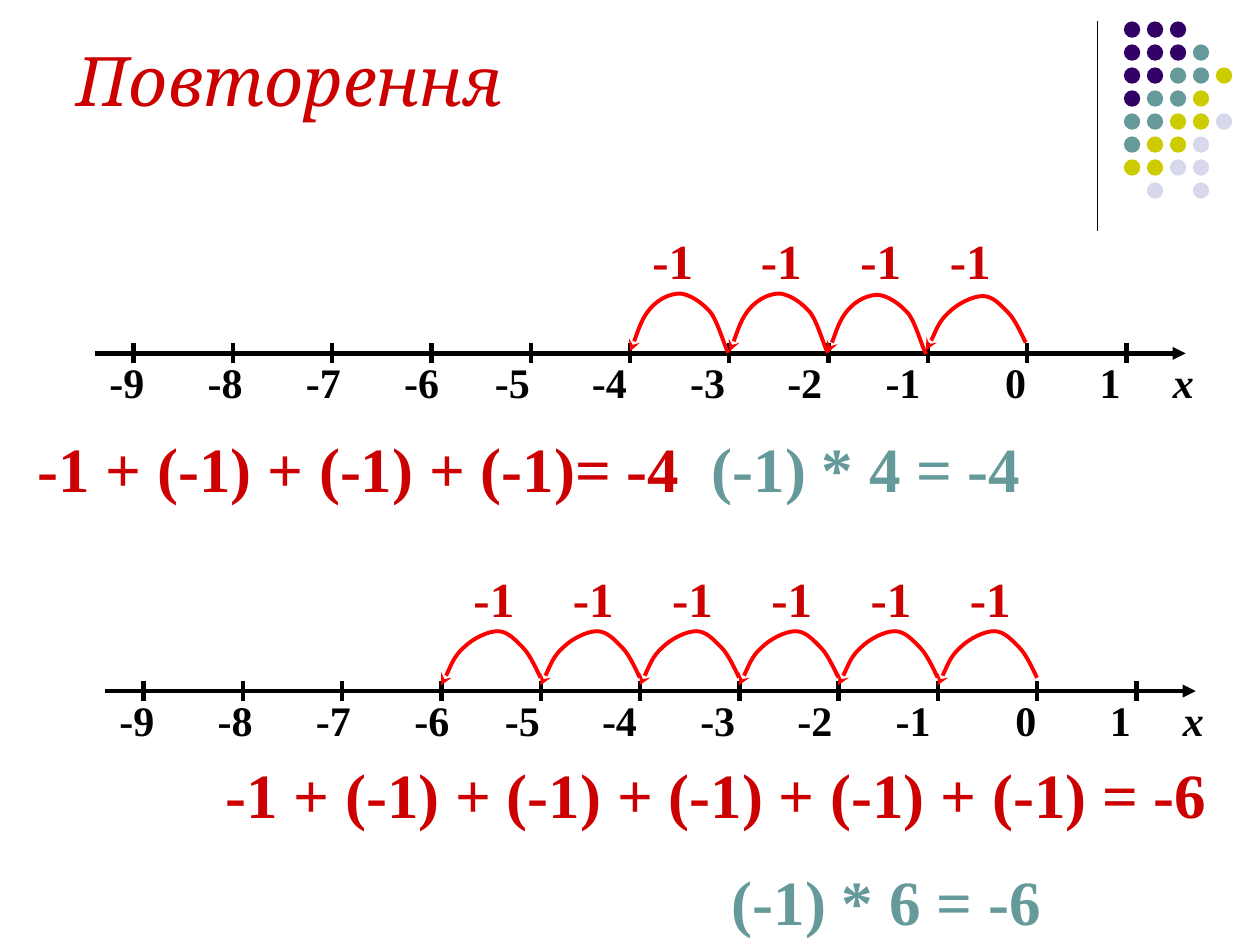
import pptx
import pptx.util
import pptx.dml.color
import pptx.enum.shapes
import pptx.enum.text
import pptx.oxml.ns
from lxml import etree

SCALE = 9144  # EMU per px, 100 px to the inch
STEP = 78.8  # one unit on the number lines
HUES = {"black": "000000", "white": "FFFFFF", "red": "CC0000", "arc": "FF0000",
        "plum": "330066", "teal": "669999", "lime": "CCCC00", "pale": "D8D8EC"}
SERIF = "Times New Roman"
SHAPE = pptx.enum.shapes.MSO_SHAPE
ANCHOR = pptx.enum.text.MSO_ANCHOR

DOTS = ["ppp", "pppt", "pptty", "ptty", "ttyyl", "tyyl", "yyll", " l l"]
DOT_HUES = {"p": "plum", "t": "teal", "y": "lime", "l": "pale"}

NUMS = ["-9", "-8", "-7", "-6", "-5", "-4", "-3", "-2", "-1", "0", "1", "х"]
TABS = [50, 128, 206, 284, 356, 433, 511, 588, 666, 761, 836, 894]

# Start point, then Bezier triples, measured from the arc's top left corner
SOFT = [(79, 37), (77, 33), (71, 19), (65, 13), (59, 7), (53, 0), (45, 0),
        (37, 0), (25, 6), (18, 13), (10, 20), (4, 37), (0, 43)]
STEEP = [(78, 47), (75, 42), (70, 23), (64, 15), (57, 7), (48, 1), (40, 0),
         (32, 0), (23, 4), (16, 12), (9, 20), (3, 40), (0, 46)]


def px(num):
    return pptx.util.Emu(round(num * SCALE))


def rgb(hue):
    return pptx.dml.color.RGBColor.from_string(HUES[hue])


def add_xml(node, tag, **attrs):
    return etree.SubElement(node, pptx.oxml.ns.qn(tag), **attrs)


def write(para, words, size=24, font=SERIF, hue="black", bold=True, slant=False):
    run = para.add_run()
    run.text = words
    run.font.size = pptx.util.Pt(size)
    run.font.name = font
    run.font.bold = bold
    run.font.italic = slant
    run.font.color.rgb = rgb(hue)


def stroke(line, hue, width, head=None):
    line.color.rgb = rgb(hue)
    line.width = pptx.util.Pt(width)
    if head:
        add_xml(line._get_or_add_ln(), "a:tailEnd", type=head)


def rule(shapes, x1, y1, x2, y2, width, head=None):
    line = shapes.add_connector(pptx.enum.shapes.MSO_CONNECTOR.STRAIGHT,
                                px(x1), px(y1), px(x2), px(y2))
    stroke(line.line, "black", width, head)
    add_xml(line._element.spPr, "a:effectLst")


def label(slide, box, words, **style):
    frame = slide.shapes.add_textbox(*map(px, box)).text_frame
    frame.word_wrap = False
    frame.auto_size = pptx.enum.text.MSO_AUTO_SIZE.SHAPE_TO_FIT_TEXT
    write(frame.paragraphs[0], words, **style)


def title(slide, box, words):
    head = slide.shapes.title
    head.left, head.top, head.width, head.height = map(px, box)
    head.text_frame.vertical_anchor = ANCHOR.MIDDLE
    para = head.text_frame.paragraphs[0]
    para.alignment = pptx.enum.text.PP_ALIGN.LEFT
    write(para, words, size=39, font="Cambria", hue="red", bold=False, slant=True)


def corner(slide, left, top):
    """Dot pattern with the upright rule on its left."""
    rule(slide.shapes, left, top, left, top + 166, 0.75)
    group = slide.shapes.add_group_shape()
    for row, marks in enumerate(DOTS):
        for col, mark in enumerate(marks):
            if mark == " ":
                continue
            x, y = left + 21 + 18.25 * col, top + 18.25 * row
            dot = group.shapes.add_shape(SHAPE.OVAL, px(x), px(y), px(13), px(13))
            dot.shadow.inherit = False
            dot.fill.solid()
            dot.fill.fore_color.rgb = rgb(DOT_HUES[mark])
            dot.line.fill.background()


def axis(slide, left, top):
    """Number line from -9 to 1 on a white panel."""
    shapes = slide.shapes.add_group_shape().shapes
    panel = shapes.add_shape(SHAPE.RECTANGLE, px(left), px(top), px(937), px(100))
    panel.shadow.inherit = False
    panel.fill.solid()
    panel.fill.fore_color.rgb = rgb("white")
    stroke(panel.line, "white", 0.75)
    frame = panel.text_frame
    frame.word_wrap = True
    frame.vertical_anchor = ANCHOR.BOTTOM
    frame.margin_bottom = px(10)
    para = frame.paragraphs[0]
    para.alignment = pptx.enum.text.PP_ALIGN.LEFT
    stops = add_xml(para._p.get_or_add_pPr(), "a:tabLst")
    for stop in TABS:
        add_xml(stops, "a:tab", pos=str(px(stop)), algn="l")
    write(para, "\t" + "\t".join(NUMS[:-1]) + "\t")
    write(para, NUMS[-1], slant=True)

    rule(shapes, left + 48, top + 47.5, left + 914, top + 47.5, 2.5, "triangle")
    for num in range(11):
        x = left + 79 + STEP * num
        rule(shapes, x, top + 39.5, x, top + 55, 2.5)


def bend(arc):
    """Turn each three straight segments into one Bezier curve."""
    lines = list(arc._element.iter(pptx.oxml.ns.qn("a:lnTo")))
    for i in range(0, len(lines), 3):
        curve = etree.Element(pptx.oxml.ns.qn("a:cubicBezTo"))
        lines[i].addprevious(curve)
        for line in lines[i:i + 3]:
            curve.append(line[0])
            line.getparent().remove(line)


def hop(slide, left, top, curve):
    spots = [(px(left + x), px(top + y)) for x, y in curve]
    pen = slide.shapes.build_freeform(*spots[0])
    pen.add_line_segments(spots[1:], close=False)
    arc = pen.convert_to_shape()
    bend(arc)
    arc.shadow.inherit = False
    arc.fill.background()
    stroke(arc.line, "arc", 2.25, "stealth")


def hops(slide, top, arcs, marks):
    """Arcs as (left, top, curve), with a -1 above each one."""
    for arc, mark in zip(arcs, marks):
        hop(slide, *arc)
        label(slide, (mark, top, 53, 57), "-1", size=28, hue="red")


def main():
    deck = pptx.Presentation()
    deck.slide_width, deck.slide_height = px(1000), px(750)
    slide = deck.slides.add_slide(deck.slide_layouts[5])
    corner(slide, 871, 17)
    title(slide, (51, 0, 900, 125), "Повторення")

    axis(slide, 27, 233)
    hops(slide, 178, [(500, 233, STEEP), (579, 233, STEEP),
                      (657, 234, STEEP), (735, 235, SOFT)], [508, 594, 673, 744])
    label(slide, (20, 336, 530, 70), "-1 + (-1) + (-1) + (-1)= -4", size=36, hue="red")
    label(slide, (555, 336, 265, 70), "(-1) * 4 = -4", size=36, hue="teal")

    axis(slide, 35, 501)
    hops(slide, 446, [(350 + STEP * i, 501, SOFT) for i in range(6)],
         [366 + STEP * i for i in range(6)])
    label(slide, (169, 595, 799, 70), "-1 + (-1) + (-1) + (-1) + (-1) + (-1) = -6",
          size=36, hue="red")
    label(slide, (571, 680, 265, 70), "(-1) * 6 = -6", size=36, hue="teal")
    deck.save("out.pptx")


if __name__ == "__main__":
    main()
